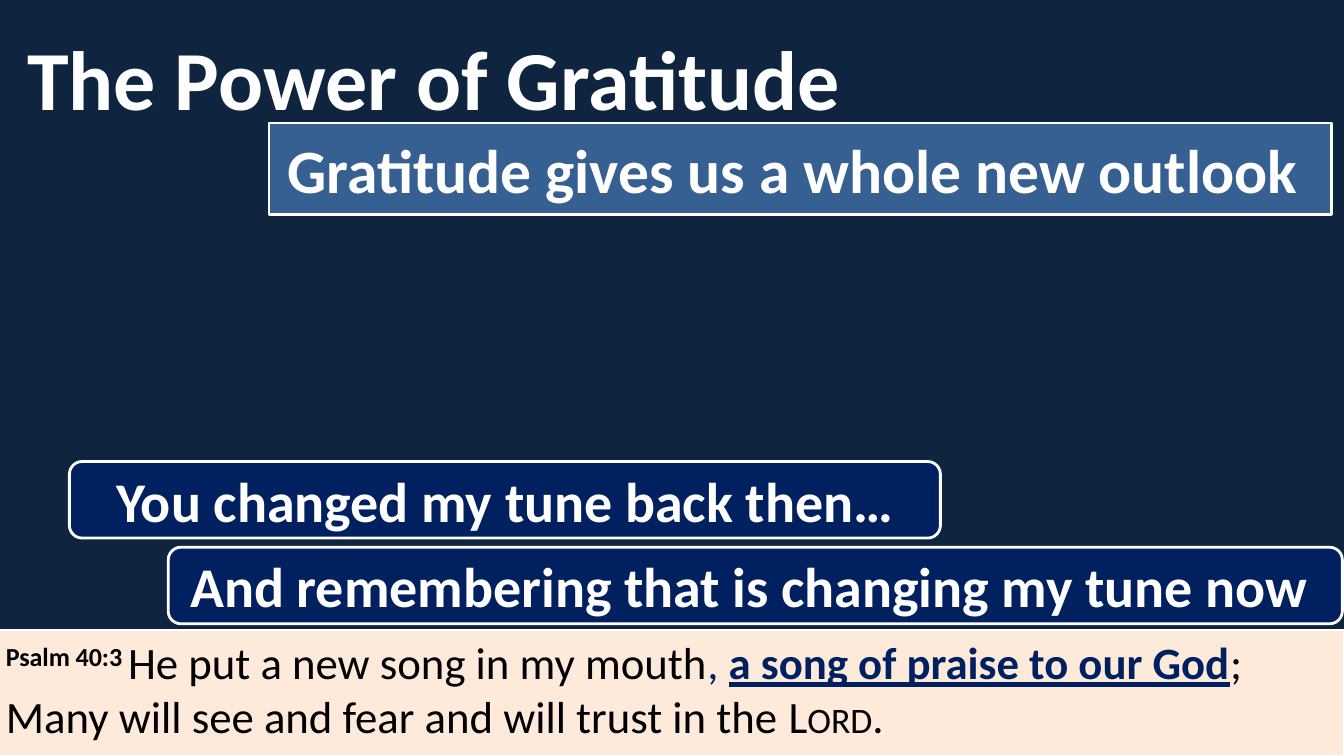
"""Build the gratitude slide with its banners and verse."""
from pptx import Presentation
from pptx.dml.color import RGBColor
from pptx.enum.shapes import MSO_SHAPE as Shape
from pptx.enum.text import MSO_ANCHOR as Anchor, MSO_AUTO_SIZE as Fit, PP_ALIGN as Align
from pptx.util import Cm, Pt

WHITE, BLACK, NAVY = "FFFFFF", "000000", "002060"
NIGHT, BLUE, CREAM = "0F243E", "376092", "FDEADA"

BANNERS = [
    ("Gratitude gives us a whole new outlook ", (6.78, 3.1, 26.77, 2.31),
     Shape.RECTANGLE, BLUE, 44),
    ("You changed my tune back then…", (1.75, 11.63, 21.95, 1.93),
     Shape.ROUNDED_RECTANGLE, NAVY, 40),
    ("And remembering that is changing my tune now ", (4.24, 13.79, 29.59, 1.93),
     Shape.ROUNDED_RECTANGLE, NAVY, 40),
]

VERSE = [
    [("Psalm 40:3 ", BLACK, "raised"),
     ("He put a new song in my mouth", BLACK, ""),
     (", ", NAVY, ""),
     ("a song of praise to our God", NAVY, "stressed"),
     (";", BLACK, "")],
    [("Many will see and fear and will trust in the ", BLACK, ""),
     ("Lord", BLACK, "small"),
     (".", BLACK, "")],
]


def paint(color, value):
    """Set a colour format from a hex string."""
    color.rgb = RGBColor.from_string(value)


def style(para, size, align, bold=False):
    """Set the font and alignment of a paragraph."""
    para.alignment = align
    para.font.name, para.font.size, para.font.bold = "Calibri", Pt(size), bold
    paint(para.font.color, WHITE)


def add_box(slide, box, kind, fill, width):
    """Add a filled box with a white outline."""
    shape = slide.shapes.add_shape(kind, *map(Cm, box))
    shape.shadow.inherit = False
    shape.fill.solid()
    paint(shape.fill.fore_color, fill)
    paint(shape.line.color, WHITE)
    shape.line.width = Pt(width)
    return shape


def add_title(slide, box, text):
    """Place and format the title."""
    title = slide.shapes.title
    title.left, title.top, title.width, title.height = map(Cm, box)
    frame = title.text_frame
    frame.text = text
    frame.auto_size, frame.vertical_anchor = Fit.NONE, Anchor.MIDDLE
    style(frame.paragraphs[0], 60, Align.LEFT, True)


def add_banner(slide, text, box, kind, fill, size):
    """Add a box with one centred line of text."""
    frame = add_box(slide, box, kind, fill, 2).text_frame
    frame.text = text
    frame.word_wrap, frame.vertical_anchor = True, Anchor.MIDDLE
    style(frame.paragraphs[0], size, Align.CENTER, True)


def add_verse(slide, box):
    """Add the verse with its mixed runs."""
    frame = add_box(slide, box, Shape.RECTANGLE, CREAM, 1.5).text_frame
    frame.word_wrap, frame.vertical_anchor = True, Anchor.TOP
    for i, line in enumerate(VERSE):
        para = frame.add_paragraph() if i else frame.paragraphs[0]
        style(para, 32, Align.LEFT)
        for text, color, look in line:
            run = para.add_run()
            run.text = text
            paint(run.font.color, color)
            if look in ("raised", "stressed"):
                run.font.bold = True
            if look == "stressed":
                run.font.underline = True
            elif look == "raised":
                run.font._element.set("baseline", "30000")
            elif look == "small":
                run.font._element.set("cap", "small")


def main():
    """Build and save the deck."""
    deck = Presentation()
    deck.slide_width, deck.slide_height = Cm(33.87), Cm(19.05)
    slide = deck.slides.add_slide(deck.slide_layouts[5])
    slide.background.fill.solid()
    paint(slide.background.fill.fore_color, NIGHT)
    add_title(slide, (0.43, 0.36, 23.29, 3.18), "The Power of Gratitude")
    add_verse(slide, (-0.1, 15.88, 33.97, 3.17))
    for banner in BANNERS:
        add_banner(slide, *banner)
    deck.save("out.pptx")


if __name__ == "__main__":
    main()
